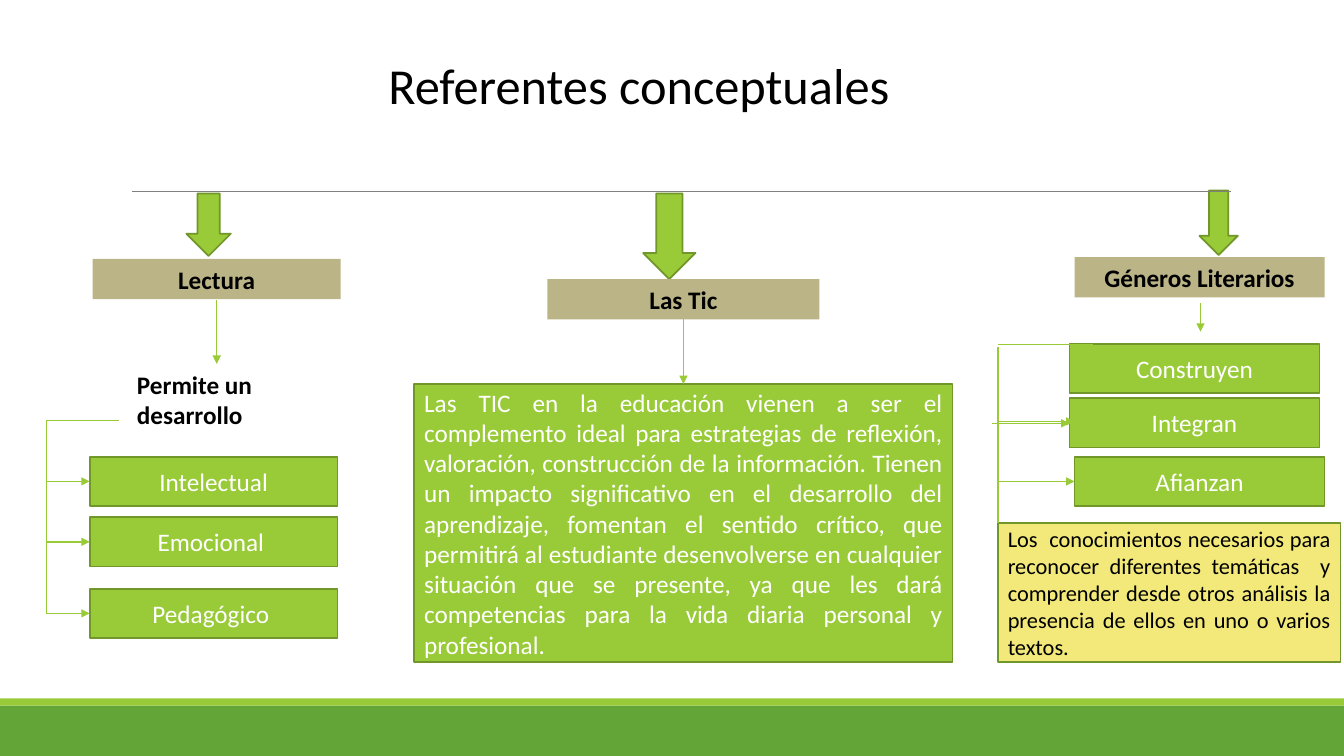
from lxml import etree
from pptx import Presentation
from pptx.dml.color import RGBColor
from pptx.enum.shapes import MSO_CONNECTOR, MSO_SHAPE
from pptx.enum.text import MSO_ANCHOR, PP_ALIGN
from pptx.oxml.ns import qn
from pptx.util import Pt

RECT, DOWN = MSO_SHAPE.RECTANGLE, MSO_SHAPE.DOWN_ARROW
STRAIGHT = MSO_CONNECTOR.STRAIGHT
TOP, MIDDLE = MSO_ANCHOR.TOP, MSO_ANCHOR.MIDDLE
LEFT, CENTER, JUSTIFY = PP_ALIGN.LEFT, PP_ALIGN.CENTER, PP_ALIGN.JUSTIFY
COLORS = {
    "green": "99CB38", "edge": "719629", "band": "63A537", "khaki": "BBB487",
    "yellow": "F2E97A", "gray": "808080", "black": "000000", "white": "FFFFFF",
}
COLORS = {name: RGBColor.from_string(value) for name, value in COLORS.items()}

prs = Presentation()
prs.slide_width, prs.slide_height = Pt(960), Pt(540)
s = prs.slides.add_slide(prs.slide_layouts[5])


def add_box(kind, box, fill, edge=None):
    sp = s.shapes.add_shape(kind, *map(Pt, box))
    sp.shadow.inherit = False
    sp.fill.solid()
    sp.fill.fore_color.rgb = COLORS[fill]
    if edge:
        sp.line.color.rgb = COLORS[edge]
        sp.line.width = Pt(1.25)
    else:
        sp.line.fill.background()
    return sp


def write(sp, text, size=18, color="black", align=CENTER, anchor=TOP, bold=False):
    tf = sp.text_frame
    tf.text = text
    tf.word_wrap = True
    tf.vertical_anchor = anchor
    p = tf.paragraphs[0]
    p.alignment = align
    font = p.runs[0].font
    font.name, font.size, font.bold = "Calibri", Pt(size), bold
    font.color.rgb = COLORS[color]


title = s.shapes.title
title.left, title.top, title.width, title.height = map(Pt, (133.2, 35.3, 646.6, 51.1))
write(title, "Referentes conceptuales", 36)

add_box(RECT, (0, 504, 960, 36), "band")
add_box(RECT, (0, 498.8, 960, 5.2), "green")

lines = [
    (94.3, 136.8, 879.1, 136.8, "gray", 0.5, False),
    (154.8, 214.6, 154.8, 259.9, "green", 1, True),
    (488.2, 228.2, 488.2, 274.3, "green", 1, True),
    (857.5, 216.7, 857.5, 236.9, "green", 1, True),
    (85, 300.2, 33.1, 300.2, "green", 1, False),
    (33.1, 300.2, 33.1, 438.2, "green", 1, False),
    (780.5, 246.2, 712.8, 246.2, "green", 1, False),
    (712.8, 247.7, 712.8, 373.7, "green", 1, False),
    (712.1, 301, 767.5, 301, "green", 1, True),
    (708.5, 302.4, 763.9, 302.4, "green", 1, True),
    (712.1, 343.9, 767.5, 343.9, "green", 1, True),
]

for box in [
    (856.8, 136.1, 27.4, 46.1),
    (459.4, 138.2, 37.4, 61.2),
    (133.2, 138.2, 31.7, 44.6),
]:
    add_box(DOWN, box, "green", "edge")

for text, box in [
    ("Lectura", (66.2, 185, 177.1, 28.8)),
    ("Las Tic", (391, 199.4, 194.4, 28.8)),
    ("Géneros Literarios", (767.5, 183.6, 178.6, 28.8)),
]:
    write(add_box(RECT, box, "khaki"), text, bold=True)

permite = s.shapes.add_textbox(*map(Pt, (90.7, 259.9, 149.8, 51.1)))
write(permite, "Permite un desarrollo", align=LEFT, bold=True)

node_h = 35.3
for text, left, top, width in [
    ("Intelectual", 64.1, 326.2, 177.1),
    ("Emocional ", 64.1, 369.4, 177.1),
    ("Pedagógico ", 64.1, 420.5, 177.1),
    ("Construyen", 763.9, 245.5, 178.6),
    ("Integran", 763.9, 284.4, 178.6),
    ("Afianzan", 767.5, 326.2, 178.6),
]:
    sp = add_box(RECT, (left, top, width, node_h), "green", "edge")
    write(sp, text, color="white", anchor=MIDDLE)
    if left < 100:
        y = top + node_h / 2
        lines.append((33.1, y, left, y, "green", 1, True))

tic = add_box(RECT, (295.9, 274.3, 384.5, 198.7), "green", "edge")
write(
    tic,
    "Las TIC en la educación vienen a ser el complemento ideal para estrategias "
    "de reflexión, valoración, construcción de la información. Tienen un impacto "
    "significativo en el desarrollo del aprendizaje, fomentan el sentido crítico, "
    "que permitirá al estudiante desenvolverse en cualquier situación que se "
    "presente, ya que les dará competencias para la vida diaria personal y "
    "profesional. ",
    color="white", align=JUSTIFY, anchor=MIDDLE,
)

note = add_box(RECT, (712.8, 373.7, 244.8, 99.4), "yellow", "edge")
write(
    note,
    "Los  conocimientos necesarios para reconocer diferentes temáticas  y "
    "comprender desde otros análisis la presencia de ellos en uno o varios textos.",
    16, align=JUSTIFY, anchor=MIDDLE,
)

for x1, y1, x2, y2, color, width, arrow in lines:
    cn = s.shapes.add_connector(STRAIGHT, Pt(x1), Pt(y1), Pt(x2), Pt(y2))
    cn.line.color.rgb = COLORS[color]
    cn.line.width = Pt(width)
    if arrow:
        etree.SubElement(cn.line._get_or_add_ln(), qn("a:tailEnd"), type="triangle")
    etree.SubElement(cn._element.spPr, qn("a:effectLst"))

prs.save("out.pptx")
